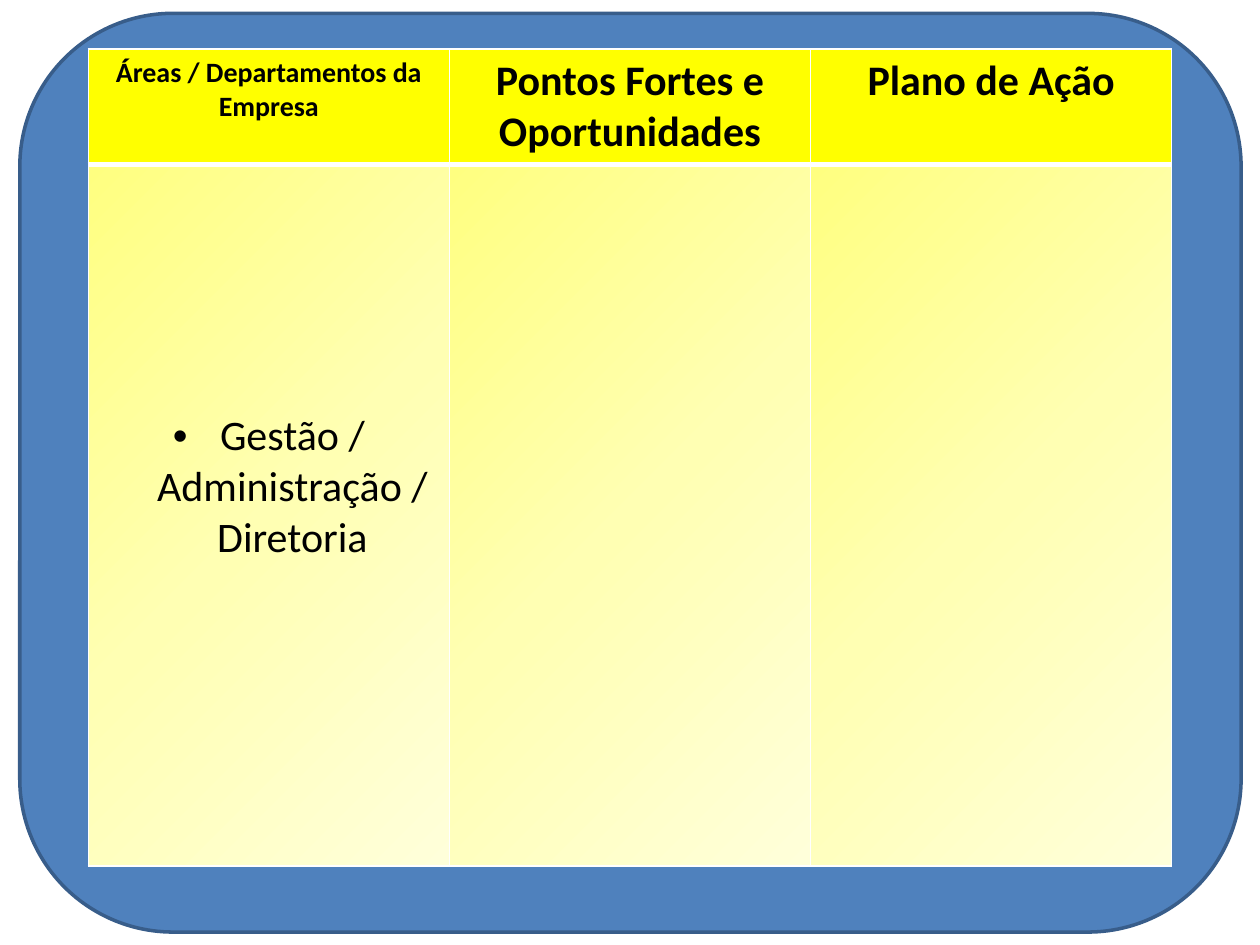
from dataclasses import dataclass

from lxml.etree import SubElement
from pptx import Presentation
from pptx.dml.color import RGBColor
from pptx.enum.shapes import MSO_SHAPE
from pptx.enum.text import PP_ALIGN
from pptx.oxml.ns import qn
from pptx.util import Cm, Pt


@dataclass(frozen=True)
class Theme:
    """Colours, font and type sizes of the slide."""
    font: str = "Calibri"
    text: str = "000000"
    panel: str = "4F81BD"
    panel_line: str = "385D8A"
    header: str = "FFFF00"
    border: str = "FFFFFF"
    body: tuple = ((0, "FFFFDA"), (50, "FFFFB3"), (100, "FFFF80"))
    small: int = 16
    large: int = 24


THEME = Theme()
HEADERS = (
    ("Áreas / Departamentos da Empresa", THEME.small),
    ("Pontos Fortes e\nOportunidades", THEME.large),
    ("Plano de Ação", THEME.large),
)
AREA = "Gestão / Administração / Diretoria"


def write_text(tf, text, size=THEME.large, bold=False, bullet=False):
    """Write centred paragraphs, one for each line of text."""
    for i, line in enumerate(text.split("\n")):
        p = tf.add_paragraph() if i else tf.paragraphs[0]
        p.alignment = PP_ALIGN.CENTER
        r = p.add_run()
        r.text = line
        r.font.name = THEME.font
        r.font.size = Pt(size)
        r.font.bold = bold
        r.font.color.rgb = RGBColor.from_string(THEME.text)
        if bullet:
            add_bullet(p)


def add_bullet(p, indent=Cm(0.95)):
    """Give a paragraph a round bullet with a hanging indent."""
    pPr = p._p.get_or_add_pPr()
    pPr.set("marL", str(indent))
    pPr.set("indent", str(-indent))
    SubElement(pPr, qn("a:buFont"), typeface="Arial")
    SubElement(pPr, qn("a:buChar"), char="•")


def add_color(parent, color):
    """Append an RGB colour element."""
    SubElement(parent, qn("a:srgbClr"), val=color)


def set_borders(cell, top=1, bottom=1):
    """Draw the four borders of a cell, with widths in points."""
    tcPr = cell._tc.get_or_add_tcPr()
    for side, width in (("L", 1), ("R", 1), ("T", top), ("B", bottom)):
        ln = SubElement(tcPr, qn(f"a:ln{side}"), w=str(Pt(width)))
        add_color(SubElement(ln, qn("a:solidFill")), THEME.border)


def set_gradient(cell, stops, angle=225):
    """Fill a cell with a linear gradient."""
    grad = SubElement(cell._tc.get_or_add_tcPr(), qn("a:gradFill"))
    gs_list = SubElement(grad, qn("a:gsLst"))
    for pos, color in stops:
        add_color(SubElement(gs_list, qn("a:gs"), pos=str(pos * 1000)), color)
    SubElement(grad, qn("a:lin"), ang=str(angle * 60000), scaled="0")


def add_panel(s):
    """Add the rounded panel behind the table."""
    sp = s.shapes.add_shape(MSO_SHAPE.ROUNDED_RECTANGLE,
                            Cm(0.4), Cm(0.27), Cm(24.62), Cm(18.52))
    sp.shadow.inherit = False
    sp.fill.solid()
    sp.fill.fore_color.rgb = RGBColor.from_string(THEME.panel)
    sp.line.color.rgb = RGBColor.from_string(THEME.panel_line)
    sp.line.width = Pt(2)


def add_plan_table(s):
    """Add the action plan table with its header and one area."""
    table = s.shapes.add_table(2, len(HEADERS), Cm(1.78), Cm(0.99),
                               Cm(21.84), Cm(16.47)).table
    table.rows[0].height = Cm(2.33)
    table.rows[1].height = Cm(14.14)
    for cell in table.iter_cells():
        cell.margin_left = cell.margin_right = Cm(0.13)
        cell.margin_top = cell.margin_bottom = Cm(0.13)
    for col, (title, size) in enumerate(HEADERS):
        head, body = table.cell(0, col), table.cell(1, col)
        set_borders(head, bottom=3)
        head.fill.solid()
        head.fill.fore_color.rgb = RGBColor.from_string(THEME.header)
        write_text(head.text_frame, title, size=size, bold=True)
        set_borders(body, top=3)
        set_gradient(body, THEME.body)
    area = table.cell(1, 0)
    area.margin_top = Cm(4.95)
    write_text(area.text_frame, AREA, bullet=True)


def main():
    """Build and save the slide."""
    prs = Presentation()
    prs.slide_width, prs.slide_height = Cm(25.4), Cm(19.05)
    s = prs.slides.add_slide(prs.slide_layouts[6])
    add_panel(s)
    add_plan_table(s)
    prs.save("out.pptx")


if __name__ == "__main__":
    main()
